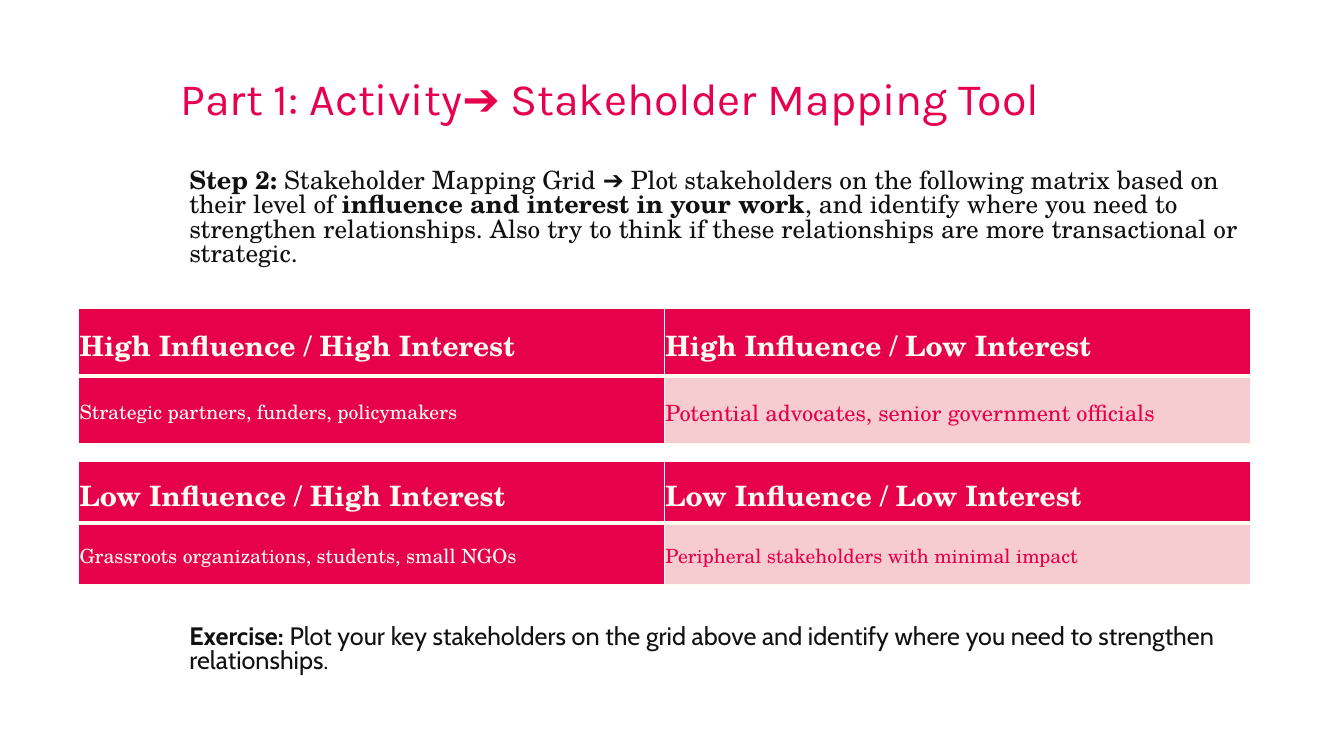
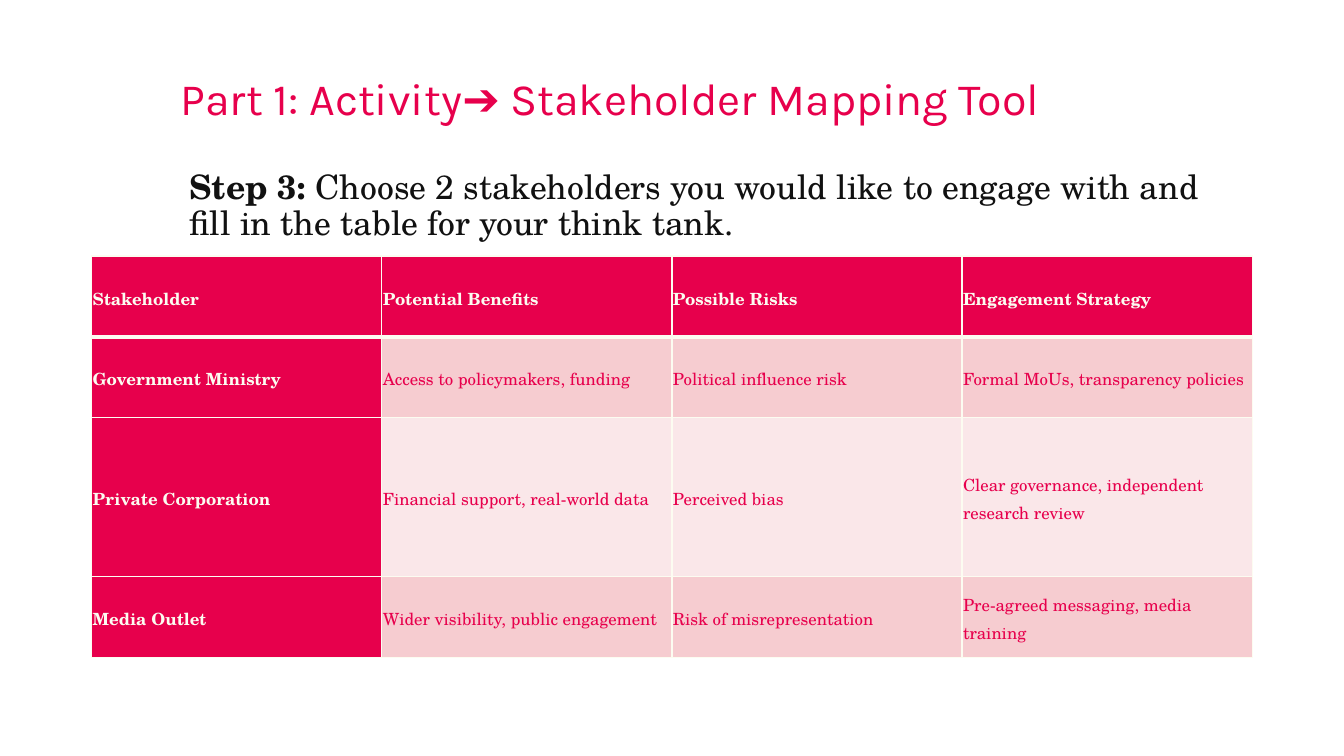
from dataclasses import dataclass

from lxml import etree
from pptx import Presentation
from pptx.dml.color import RGBColor
from pptx.enum.text import MSO_ANCHOR, MSO_AUTO_SIZE, PP_ALIGN
from pptx.oxml.ns import qn
from pptx.util import Inches, Pt

TOP, MIDDLE = MSO_ANCHOR.TOP, MSO_ANCHOR.MIDDLE
LEFT = PP_ALIGN.LEFT
NO_FIT = MSO_AUTO_SIZE.NONE

CRIMSON, ROSE, BLUSH = "E7004C", "F6CCD0", "FAE7E9"
CREAM, INK = "FCFCF1", "111111"
TITLE_FONT, SERIF, SANS = "Karla", "TeX Gyre Schola", "Cabin"
TITLE = "Part 1: Activity➔ Stakeholder Mapping Tool"
TITLE_ONLY = 5


@dataclass(frozen=True)
class Span:
    text: str
    bold: bool = False


@dataclass(frozen=True)
class Cell:
    text: str
    size: float
    fill: str = CRIMSON
    bold: bool = False

    @property
    def ink(self) -> str:
        return CREAM if self.fill == CRIMSON else CRIMSON


@dataclass(frozen=True)
class Grid:
    left: float
    top: float
    width: float
    row_heights: list[float]
    rows: list[list[Cell]]


def colour(value: str) -> RGBColor:
    return RGBColor.from_string(value)


def add_span(para, span: Span, font: str, size: float, ink: str) -> None:
    run = para.add_run()
    run.text = span.text
    run.font.name = font
    run.font.size = Pt(size)
    run.font.bold = span.bold
    run.font.color.rgb = colour(ink)


def add_page(deck):
    """Add a slide with the shared title."""
    page = deck.slides.add_slide(deck.slide_layouts[TITLE_ONLY])
    title = page.shapes.title
    title.left, title.top = Inches(1.79), Inches(0.76)
    title.width, title.height = Inches(10.63), Inches(0.66)
    frame = title.text_frame
    frame.margin_left = frame.margin_right = 0
    frame.margin_top = frame.margin_bottom = 0
    frame.vertical_anchor = TOP
    frame.auto_size = NO_FIT
    para = frame.paragraphs[0]
    para.alignment = LEFT
    para.line_spacing = 0.9
    add_span(para, Span(TITLE), TITLE_FONT, 32, CRIMSON)
    return page


def add_text(page, top: float, height: float, spans: list[Span], size: float,
             spacing: float, font: str = SERIF) -> None:
    box = page.shapes.add_textbox(Inches(1.78), Inches(top), Inches(10.64), Inches(height))
    box.text_frame.word_wrap = True
    para = box.text_frame.paragraphs[0]
    para.line_spacing = spacing
    for span in spans:
        add_span(para, span, font, size, INK)


def add_borders(cell, top: float, bottom: float) -> None:
    properties = cell._tc.get_or_add_tcPr()
    for side, points in (("L", 1), ("R", 1), ("T", top), ("B", bottom)):
        line = etree.SubElement(properties, qn(f"a:ln{side}"), w=str(Pt(points)))
        fill = etree.SubElement(line, qn("a:solidFill"))
        etree.SubElement(fill, qn("a:srgbClr"), val=CREAM)


def fill_cell(cell, content: Cell) -> None:
    cell.margin_left = cell.margin_right = Inches(0.01)
    cell.margin_top = cell.margin_bottom = Inches(0.01)
    cell.vertical_anchor = MIDDLE
    cell.fill.solid()
    cell.fill.fore_color.rgb = colour(content.fill)
    para = cell.text_frame.paragraphs[0]
    para.line_spacing = 1.15
    para.space_after = Pt(8)
    add_span(para, Span(content.text, content.bold), SERIF, content.size, content.ink)


def add_grid(page, grid: Grid) -> None:
    """Draw a table with a thick rule below its first row."""
    columns = len(grid.rows[0])
    table = page.shapes.add_table(
        len(grid.rows), columns, Inches(grid.left), Inches(grid.top),
        Inches(grid.width), Inches(sum(grid.row_heights))).table
    table.first_row = table.horz_banding = False
    for column in table.columns:
        column.width = Inches(grid.width / columns)
    for r, (height, contents) in enumerate(zip(grid.row_heights, grid.rows)):
        table.rows[r].height = Inches(height)
        for c, content in enumerate(contents):
            cell = table.cell(r, c)
            add_borders(cell, top=3 if r == 1 else 1, bottom=3 if r == 0 else 1)
            fill_cell(cell, content)


def quadrant_grid(top: float, row_height: float, headings: list[str],
                  left_cell: Cell, right_cell: Cell) -> Grid:
    header = [Cell(text, 20, bold=True) for text in headings]
    return Grid(0.78, top, 11.62, [row_height] * 2, [header, [left_cell, right_cell]])


def engagement_row(texts: list[str], fill: str) -> list[Cell]:
    name, *details = texts
    return [Cell(name, 12, bold=True)] + [
        Cell(text, 12, fill, bold=fill == CRIMSON) for text in details]


QUADRANTS = [
    quadrant_grid(3.06, 0.67, ["High Influence / High Interest", "High Influence / Low Interest"],
                  Cell("Strategic partners, funders, policymakers", 14),
                  Cell("Potential advocates, senior government officials", 16, ROSE)),
    quadrant_grid(4.58, 0.61, ["Low Influence / High Interest", "Low Influence / Low Interest"],
                  Cell("Grassroots organizations, students, small NGOs", 14),
                  Cell("Peripheral stakeholders with minimal impact", 14, ROSE)),
]

ENGAGEMENT = Grid(0.91, 2.54, 11.51, [0.8, 0.8, 1.58, 0.8], [
    engagement_row(["Stakeholder", "Potential Benefits", "Possible Risks",
                    "Engagement Strategy"], CRIMSON),
    engagement_row(["Government Ministry", "Access to policymakers, funding",
                    "Political influence risk", "Formal MoUs, transparency policies"], ROSE),
    engagement_row(["Private Corporation", "Financial support, real-world data",
                    "Perceived bias", "Clear governance, independent research review"], BLUSH),
    engagement_row(["Media Outlet", "Wider visibility, public engagement",
                    "Risk of misrepresentation", "Pre-agreed messaging, media training"], ROSE),
])


def build_mapping_page(deck) -> None:
    page = add_page(deck)
    add_text(page, 1.64, 1.2, [
        Span("Step 2: ", True),
        Span("Stakeholder Mapping Grid ➔ Plot stakeholders on the following matrix "
             "based on their level of "),
        Span("influence and interest in your work", True),
        Span(", and identify where you need to strengthen relationships. Also try to think "
             "if these relationships are more transactional or strategic."),
    ], 18, 0.8)
    for grid in QUADRANTS:
        add_grid(page, grid)
    add_text(page, 6.16, 0.65, [
        Span("Exercise:", True),
        Span(" Plot your key stakeholders on the grid above and identify where you need "
             "to strengthen relationships."),
    ], 18, 0.8, SANS)


def build_engagement_page(deck) -> None:
    page = add_page(deck)
    add_text(page, 1.64, 0.85, [
        Span("Step 3: ", True),
        Span("Choose 2 stakeholders you would like to engage with and fill in the table "
             "for your think tank."),
    ], 24, 0.9)
    add_grid(page, ENGAGEMENT)


def main() -> None:
    deck = Presentation()
    deck.slide_width, deck.slide_height = Inches(13.33), Inches(7.5)
    build_mapping_page(deck)
    build_engagement_page(deck)
    deck.save("out.pptx")


if __name__ == "__main__":
    main()
